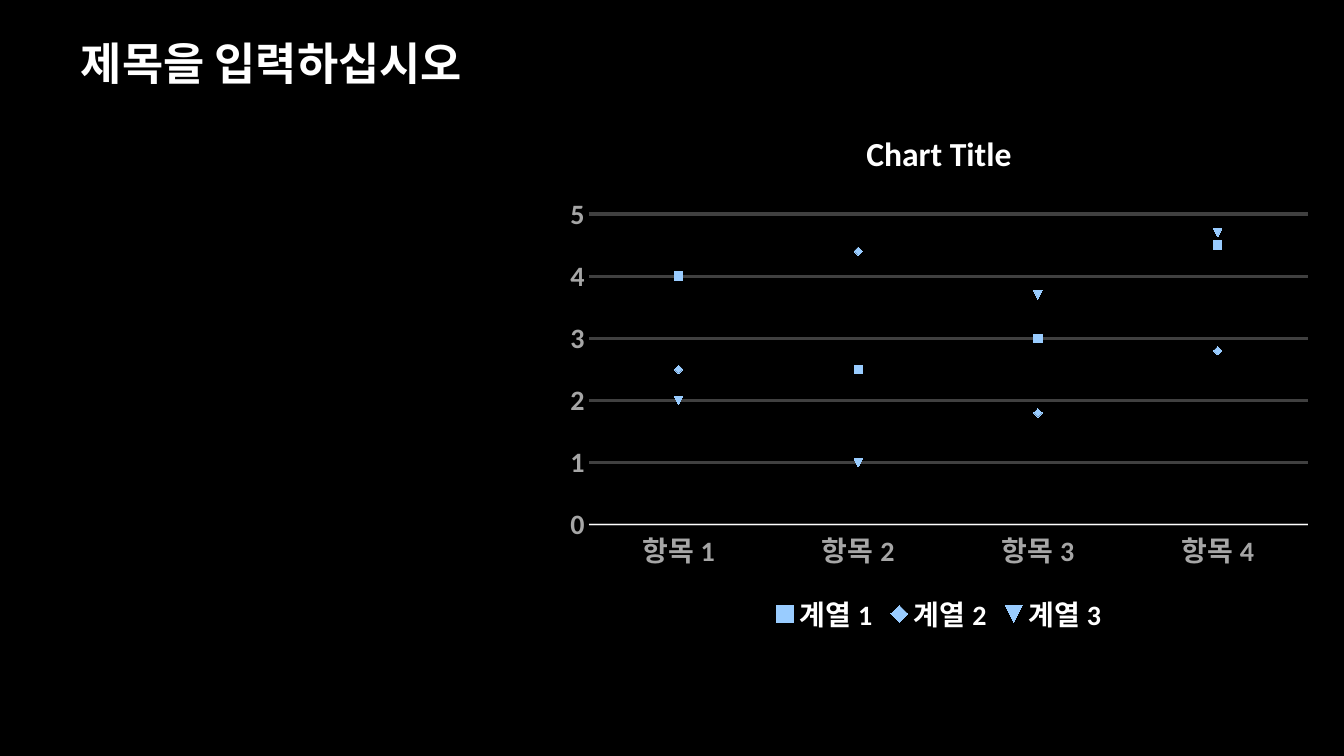
from pptx import Presentation
from pptx.chart.data import CategoryChartData
from pptx.dml.color import RGBColor
from pptx.enum.chart import (XL_CHART_TYPE as ChartType,
                             XL_LEGEND_POSITION as LegendPos,
                             XL_TICK_MARK as Tick)
from pptx.enum.text import MSO_ANCHOR as Anchor
from pptx.util import Emu, Pt

EMU_PER_PX = 914400 / 100.8
FONT = "Calibri"
BLACK = RGBColor(0x00, 0x00, 0x00)
WHITE = RGBColor(0xFF, 0xFF, 0xFF)
LABEL_GREY = RGBColor(0xA6, 0xA6, 0xA6)
GRID_GREY = RGBColor(0x40, 0x40, 0x40)
MARKER_BLUE = RGBColor(0x99, 0xCC, 0xFF)

CATEGORIES = ["항목 1", "항목 2", "항목 3", "항목 4"]
SERIES = {
    "계열 1": (4, 2.5, 3, 4.5),
    "계열 2": (2.5, 4.4, 1.8, 2.8),
    "계열 3": (2, 1, 3.7, 4.7),
}


def px(n):
    return Emu(round(n * EMU_PER_PX))


def style_font(font, size, color):
    font.name = FONT
    font.size = Pt(size)
    font.bold = True
    font.color.rgb = color


def add_title(s, text, x, y, w, h):
    tf = s.shapes.add_textbox(px(x), px(y), px(w), px(h)).text_frame
    tf.word_wrap = True
    tf.vertical_anchor = Anchor.MIDDLE
    p = tf.paragraphs[0]
    p.line_spacing = 0.9
    r = p.add_run()
    r.text = text
    style_font(r.font, 32, WHITE)


def style_axis(axis):
    axis.major_tick_mark = axis.minor_tick_mark = Tick.NONE
    style_font(axis.tick_labels.font, 20, LABEL_GREY)


def style_series(series):
    """Show the points only, with the automatic symbol of each series."""
    series.smooth = False
    series.format.line.fill.background()
    marker = series.marker
    marker.size = 6
    marker.format.fill.solid()
    marker.format.fill.fore_color.rgb = MARKER_BLUE
    marker.format.line.fill.background()


def add_point_chart(s, title, x, y, w, h):
    data = CategoryChartData()
    data.categories = CATEGORIES
    for name, values in SERIES.items():
        data.add_series(name, values)
    chart = s.shapes.add_chart(ChartType.LINE_MARKERS, px(x), px(y),
                               px(w), px(h), data).chart
    style_font(chart.font, 20, WHITE)

    chart.has_title = True
    r = chart.chart_title.text_frame.paragraphs[0].add_run()
    r.text = title
    style_font(r.font, 24, WHITE)
    chart.chart_title.include_in_layout = False

    chart.has_legend = True
    chart.legend.position = LegendPos.BOTTOM
    chart.legend.include_in_layout = False
    style_font(chart.legend.font, 20, WHITE)

    cat_axis, val_axis = chart.category_axis, chart.value_axis
    style_axis(cat_axis)
    cat_axis.format.line.color.rgb = WHITE
    cat_axis.format.line.width = Pt(0.75)

    style_axis(val_axis)
    val_axis.minimum_scale, val_axis.maximum_scale = 0, 5
    val_axis.major_unit = 1
    val_axis.format.line.fill.background()
    grid = val_axis.major_gridlines.format.line
    grid.color.rgb = GRID_GREY
    grid.width = Pt(2.25)

    plot = chart.plots[0]
    plot.vary_by_categories = False
    for series in plot.series:
        style_series(series)


def main():
    prs = Presentation()
    prs.slide_width, prs.slide_height = px(1344), px(756)
    s = prs.slides.add_slide(prs.slide_layouts[6])
    s.background.fill.solid()
    s.background.fill.fore_color.rgb = BLACK
    add_title(s, "제목을 입력하십시오", 71, 20, 1200, 91)
    add_point_chart(s, "Chart Title", 555, 109, 768, 531)
    prs.save("out.pptx")


if __name__ == "__main__":
    main()
